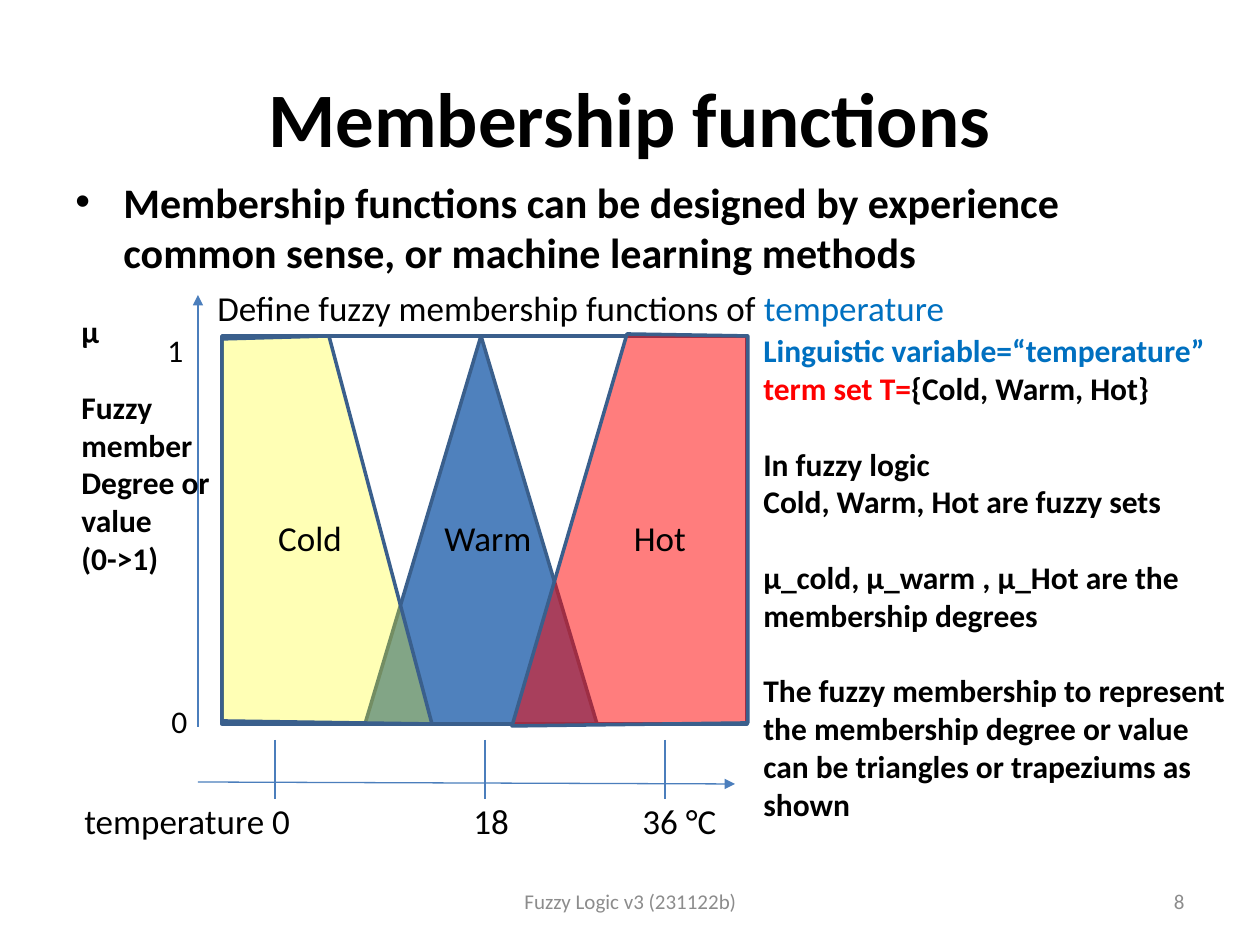
from lxml.etree import SubElement
from pptx import Presentation
from pptx.dml.color import RGBColor
from pptx.enum.shapes import MSO_CONNECTOR, MSO_SHAPE
from pptx.enum.text import MSO_ANCHOR, PP_ALIGN
from pptx.oxml.ns import qn
from pptx.util import Pt

PX = 914400 / 126
FONT = "Calibri"
BLACK, GREY, BLUE, RED = "000000", "8C8C8C", "0070C0", "FF0000"
OUTLINE, AXIS = "3A5F8C", "4B7EBC"


def px(length):
    return round(length * PX)


def color(hex_string):
    return RGBColor.from_string(hex_string)


def add_text(slide, box, groups, size=18, fill=BLACK, bold=False,
             align=PP_ALIGN.LEFT, anchor=MSO_ANCHOR.TOP):
    """Groups of paragraphs stand one line apart; a paragraph is a string or (text, colour) runs."""
    shape = slide.shapes.add_textbox(*map(px, box))
    frame = shape.text_frame
    frame.word_wrap = True
    frame.vertical_anchor = anchor
    if isinstance(groups, str):
        groups = [[groups]]
    paragraph = None
    for group in groups:
        for index, content in enumerate(group):
            new_group = paragraph is not None and index == 0
            paragraph = frame.add_paragraph() if paragraph is not None else frame.paragraphs[0]
            paragraph.alignment = align
            if new_group:
                paragraph.space_before = Pt(size * 1.2)
            runs = [(content, fill)] if isinstance(content, str) else content
            for text, run_color in runs:
                run = paragraph.add_run()
                run.text = text
                run.font.name = FONT
                run.font.size = Pt(size)
                run.font.bold = bold
                run.font.color.rgb = color(run_color)
    return shape


def add_line(slide, start, end, arrow=False):
    line = slide.shapes.add_connector(MSO_CONNECTOR.STRAIGHT, *map(px, (*start, *end)))
    line.line.color.rgb = color(AXIS)
    line.line.width = Pt(0.75)
    properties = line._element.spPr
    if arrow:
        SubElement(properties.find(qn("a:ln")), qn("a:tailEnd"), type="triangle")
    SubElement(properties, qn("a:effectLst"))


def style_shape(shape, fill=None, opacity=100):
    shape.shadow.inherit = False
    shape.line.color.rgb = color(OUTLINE)
    shape.line.width = Pt(2)
    if fill is None:
        shape.fill.background()
        return
    shape.fill.solid()
    shape.fill.fore_color.rgb = color(fill)
    if opacity < 100:
        fill_color = shape._element.spPr.find(qn("a:solidFill"))[0]
        SubElement(fill_color, qn("a:alpha"), val=str(opacity * 1000))


def add_trapezium(slide, points, fill, opacity):
    builder = slide.shapes.build_freeform(*points[0], scale=PX)
    builder.add_line_segments(points[1:], close=True)
    style_shape(builder.convert_to_shape(), fill, opacity)


def add_heading(slide, box):
    left, top, width, height = box
    add_text(slide, (left, top, width, 158), "Membership functions", size=44, bold=True,
             align=PP_ALIGN.CENTER, anchor=MSO_ANCHOR.MIDDLE)
    body = add_text(slide, (left, top + 132, width, height - 132),
                    "Membership functions can be designed by experience common sense, "
                    "or machine learning methods", size=24, bold=True)
    properties = body.text_frame.paragraphs[0]._p.get_or_add_pPr()
    properties.set("marL", str(px(48)))
    properties.set("indent", str(px(-48)))
    SubElement(properties, qn("a:buFont"), typeface="Arial")
    SubElement(properties, qn("a:buChar"), char="•")


def add_membership_plot(slide, box):
    left, top, width, height = box
    right, bottom = left + width, top + height
    style_shape(slide.shapes.add_shape(MSO_SHAPE.RECTANGLE, *map(px, box)))
    warm = slide.shapes.add_shape(MSO_SHAPE.ISOSCELES_TRIANGLE,
                                  *map(px, (left + 143, top, 232, height)))
    style_shape(warm, "4F81BD")
    add_trapezium(slide, [(left + 405, top - 2), (left + 290, bottom + 2),
                          (right + 1, bottom - 1), (right + 1, top)], RED, 51)
    add_trapezium(slide, [(left + 107, top), (left + 210, bottom),
                          (left, bottom - 3), (left, top + 3)], "FFFF00", 29)
    for name, center in (("Cold", 88), ("Warm", 266), ("Hot", 438)):
        add_text(slide, (left + center - 70, top + 174, 140, 55), name, size=20,
                 align=PP_ALIGN.CENTER)

    axis = left - 24
    add_line(slide, (axis, bottom + 3), (axis, top - 41), arrow=True)
    add_line(slide, (axis, bottom + 58), (right - 12, bottom + 60), arrow=True)
    for tick in (53, 263, 443):
        add_line(slide, (left + tick, bottom + 16), (left + tick, bottom + 75))
    for label, label_left, label_width in (("temperature 0", -150, 240),
                                           ("18", 239, 70), ("36 °C", 408, 120)):
        add_text(slide, (left + label_left, bottom + 69, label_width, 55), label, size=20)
    add_text(slide, (left - 67, top - 11, 42, 50), "1")
    add_text(slide, (left - 63, bottom - 28, 42, 50), "0")
    add_text(slide, (left - 17, top - 56, 760, 55),
             [[[("Define fuzzy membership functions of ", BLACK), ("temperature", BLUE)]]],
             size=20)
    add_text(slide, (left - 153, top - 30, 630, 280),
             [["μ"], ["Fuzzy", "member", "Degree or", "value", "(0->1)"]], bold=True)


def add_explanation(slide, box):
    add_text(slide, box, [
        [[("Linguistic variable=“temperature”", BLUE)],
         [("term set T=", RED), ("{Cold, Warm, Hot}", BLACK)]],
        ["In fuzzy logic", "Cold, Warm, Hot are fuzzy sets"],
        ["μ_cold, μ_warm , μ_Hot are the membership degrees"],
        ["The fuzzy membership to represent the membership degree or value "
         "can be triangles or trapeziums as shown"],
    ], bold=True)


def add_footer(slide, box):
    left, top, width, height = box
    add_text(slide, (left + 368, top, 399, height), "Fuzzy Logic v3 (231122b)", size=12,
             fill=GREY, align=PP_ALIGN.CENTER, anchor=MSO_ANCHOR.MIDDLE)
    add_text(slide, (left + width - 294, top, 294, height), "8", size=12,
             fill=GREY, align=PP_ALIGN.RIGHT, anchor=MSO_ANCHOR.MIDDLE)


def main():
    presentation = Presentation()
    presentation.slide_width, presentation.slide_height = px(1260), px(945)
    slide = presentation.slides.add_slide(presentation.slide_layouts[6])
    add_heading(slide, (63, 38, 1134, 756))
    add_footer(slide, (63, 876, 1134, 50))
    add_membership_plot(slide, (222, 336, 525, 388))
    add_explanation(slide, (751, 325, 501, 547))
    presentation.save("out.pptx")


if __name__ == "__main__":
    main()
